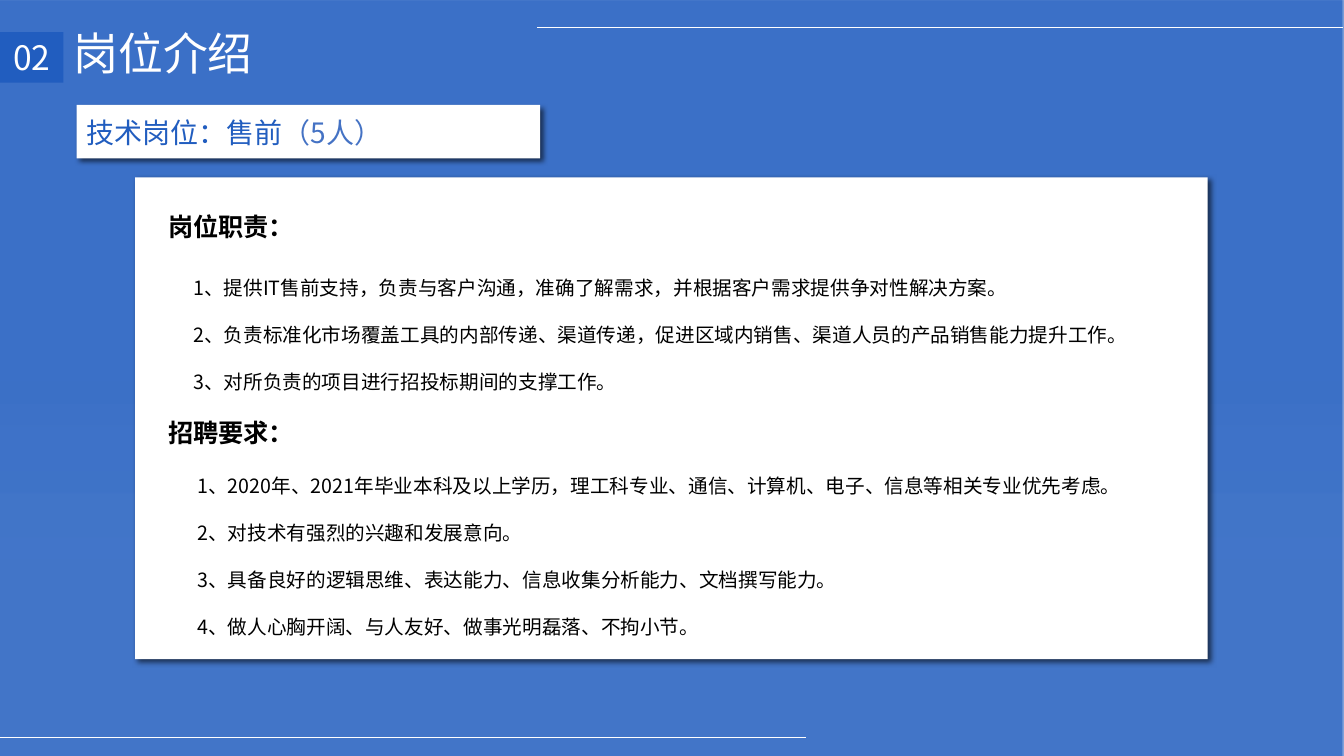
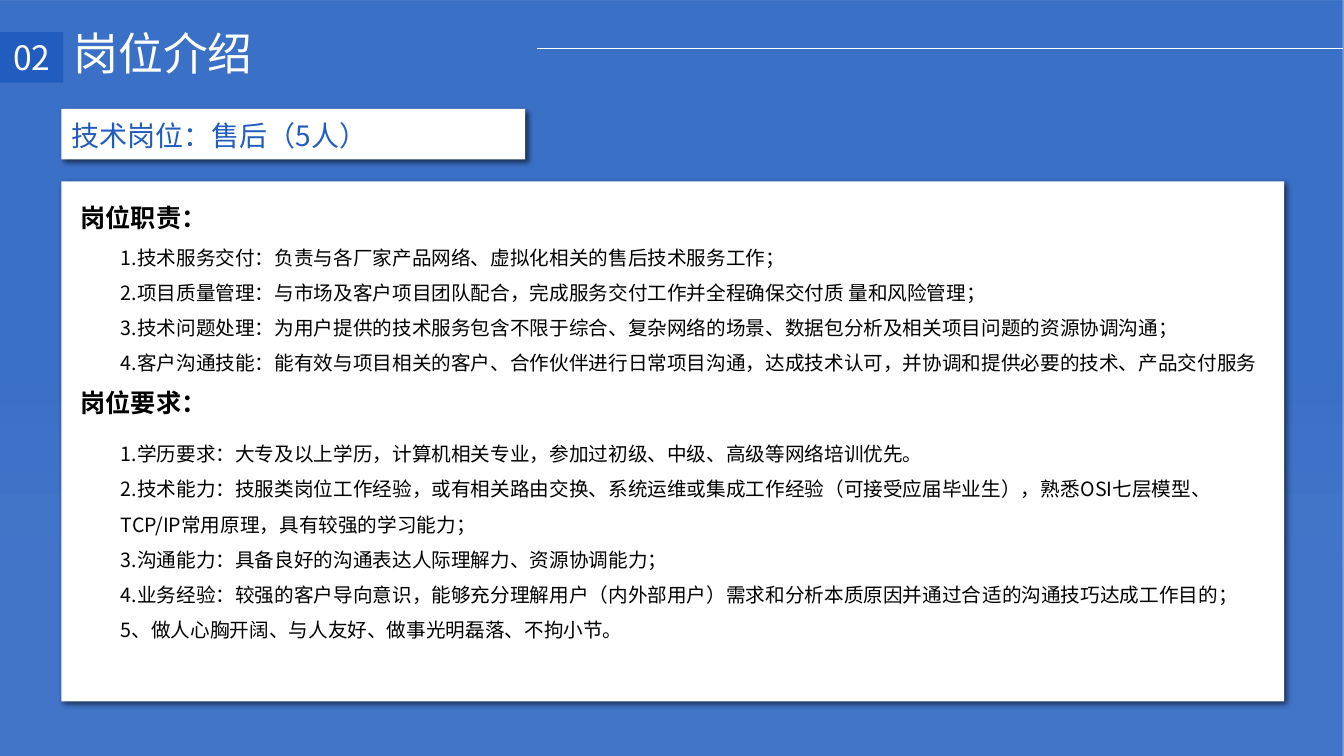
from lxml import etree
from pptx import Presentation
from pptx.dml.color import RGBColor
from pptx.enum import shapes, text
from pptx.oxml.ns import qn
from pptx.util import Pt

FONT = "Noto Sans CJK SC"
COLORS = {"blue": "215DBF", "light_blue": "4472C4", "white": "FFFFFF", "black": "000000"}
WIDTH, HEIGHT = 960, 540
GRADIENT = [(0.45, 88), (0.75, 84)]  # position, opacity in percent
SECTION_NUMBER, SECTION_TITLE = "02", "岗位介绍"

# Boxes are (left, top, width, height); rules are (start x, end x, y).
SLIDES = [
    {
        "job": [("技术岗位：售前", "blue"), ("（5人）", "light_blue")],
        "job_card": (54.7, 74.9, 331.2, 38.2),
        "job_text_top": 79.2,
        "rules": [(383.8, 959, 19.4), (0, 576, 527)],
        "panel": (96.5, 126.7, 766.1, 344.2),
        "line_spacing": 2.0,
        "sections": [
            {
                "heading": "岗位职责：",
                "heading_box": (113, 128.9, 134, 65.5),
                "items_box": (131, 176.4, 697, 108.7),
                "items": [
                    "1、提供IT售前支持，负责与客户沟通，准确了解需求，并根据客户需求提供争对性解决方案。",
                    "2、负责标准化市场覆盖工具的内部传递、渠道传递，促进区域内销售、渠道人员的产品销售能力提升工作。",
                    "3、对所负责的项目进行招投标期间的支撑工作。",
                ],
            },
            {
                "heading": "招聘要求：",
                "heading_box": (113, 273.6, 134, 70.6),
                "items_box": (133.9, 318.2, 690.5, 117.4),
                "items": [
                    "1、2020年、2021年毕业本科及以上学历，理工科专业、通信、计算机、电子、信息等相关专业优先考虑。",
                    "2、对技术有强烈的兴趣和发展意向。",
                    "3、具备良好的逻辑思维、表达能力、信息收集分析能力、文档撰写能力。",
                    "4、做人心胸开阔、与人友好、做事光明磊落、不拘小节。",
                ],
            },
        ],
    },
    {
        "job": [("技术岗位：售后（5人）", "blue")],
        "job_card": (43.9, 77.8, 331.2, 36),
        "job_text_top": 81.4,
        "rules": [(383.8, 959, 34.6)],
        "panel": (43.9, 129.6, 873.4, 371.5),
        "line_spacing": 1.5,
        "sections": [
            {
                "heading": "岗位职责：",
                "heading_box": (50.4, 123.1, 134, 64.1),
                "items_box": (79.2, 163.4, 833.8, 106.6),
                "items": [
                    "1.技术服务交付：负责与各厂家产品网络、虚拟化相关的售后技术服务工作；",
                    "2.项目质量管理：与市场及客户项目团队配合，完成服务交付工作并全程确保交付质 量和风险管理；",
                    "3.技术问题处理：为用户提供的技术服务包含不限于综合、复杂网络的场景、数据包分析及相关项目问题的资源协调沟通；",
                    "4.客户沟通技能：能有效与项目相关的客户、合作伙伴进行日常项目沟通，达成技术认可，并协调和提供必要的技术、产品交付服务",
                ],
            },
            {
                "heading": "岗位要求：",
                "heading_box": (50.4, 256.3, 134, 61.9),
                "items_box": (79.2, 303.8, 812.2, 129.6),
                "items": [
                    "1.学历要求：大专及以上学历，计算机相关专业，参加过初级、中级、高级等网络培训优先。",
                    "2.技术能力：技服类岗位工作经验，或有相关路由交换、系统运维或集成工作经验（可接受应届毕业生），熟悉OSI七层模型、TCP/IP常用原理，具有较强的学习能力；",
                    "3.沟通能力：具备良好的沟通表达人际理解力、资源协调能力；",
                    "4.业务经验：较强的客户导向意识，能够充分理解用户（内外部用户）需求和分析本质原因并通过合适的沟通技巧达成工作目的；",
                    "5、做人心胸开阔、与人友好、做事光明磊落、不拘小节。",
                ],
            },
        ],
    },
]


def rgb(name):
    return RGBColor.from_string(COLORS[name])


def add_rect(s, box, fill=None):
    sp = s.shapes.add_shape(shapes.MSO_SHAPE.RECTANGLE, *map(Pt, box))
    sp.shadow.inherit = False
    sp.line.fill.background()
    if fill:
        sp.fill.solid()
        sp.fill.fore_color.rgb = rgb(fill)
    return sp


def add_card(s, box):
    """Add a white rectangle that casts a soft shadow to the lower right."""
    sp = add_rect(s, box, "white")
    effects = sp._element.spPr.find(qn("a:effectLst"))
    shadow = etree.SubElement(effects, qn("a:outerShdw"), blurRad=str(Pt(4)),
                              dist=str(Pt(3)), dir="2700000", algn="tl", rotWithShape="0")
    color = etree.SubElement(shadow, qn("a:srgbClr"), val=COLORS["black"])
    etree.SubElement(color, qn("a:alpha"), val="58000")


def write(sp, paragraphs, size, bold=False, align=text.PP_ALIGN.LEFT,
          anchor=text.MSO_ANCHOR.TOP, spacing=None):
    """Fill a shape with paragraphs, each a list of (text, colour name) runs."""
    tf = sp.text_frame
    tf.word_wrap = True
    tf.vertical_anchor = anchor
    for i, runs in enumerate(paragraphs):
        p = tf.add_paragraph() if i else tf.paragraphs[0]
        p.alignment = align
        if spacing:
            p.line_spacing = spacing
        for content, color in runs:
            r = p.add_run()
            r.text = content
            r.font.size = Pt(size)
            r.font.bold = bold
            r.font.color.rgb = rgb(color)
            r.font.name = FONT
            etree.SubElement(r.font._element, qn("a:ea"), typeface=FONT)


def add_text(s, box, paragraphs, size, **style):
    write(s.shapes.add_textbox(*map(Pt, box)), paragraphs, size, **style)


def add_rule(s, x1, x2, y):
    line = s.shapes.add_connector(shapes.MSO_CONNECTOR.STRAIGHT, Pt(x1), Pt(y), Pt(x2), Pt(y))
    line.line.color.rgb = rgb("white")
    line.line.width = Pt(0.5)
    etree.SubElement(line._element.spPr, qn("a:effectLst"))


def add_backdrop(s):
    sp = add_rect(s, (-0.7, 0, WIDTH, HEIGHT))
    sp.fill.gradient()
    sp.fill.gradient_angle = 270
    for stop, (position, _) in zip(sp.fill.gradient_stops, GRADIENT):
        stop.position = position
        stop.color.rgb = rgb("blue")
    for color, (_, opacity) in zip(sp._element.spPr.iter(qn("a:srgbClr")), GRADIENT):
        etree.SubElement(color, qn("a:alpha"), val=str(opacity * 1000))


def add_header(s):
    add_text(s, (45.4, 15.1, 170, 46), [[(SECTION_TITLE, "white")]], 32)
    badge = add_rect(s, (0, 23, 45.4, 36), "blue")
    write(badge, [[(SECTION_NUMBER, "white")]], 24,
          align=text.PP_ALIGN.CENTER, anchor=text.MSO_ANCHOR.MIDDLE)


def add_section(s, section, spacing):
    add_text(s, section["heading_box"], [[(section["heading"], "black")]], 18,
             bold=True, anchor=text.MSO_ANCHOR.MIDDLE)
    add_text(s, section["items_box"], [[(item, "black")] for item in section["items"]], 14,
             spacing=spacing)


def add_job_slide(prs, job):
    s = prs.slides.add_slide(prs.slide_layouts[6])
    add_backdrop(s)
    add_header(s)
    add_card(s, job["job_card"])
    add_text(s, (job["job_card"][0], job["job_text_top"], 296, 31.7), [job["job"]], 20)
    for rule in job["rules"]:
        add_rule(s, *rule)
    add_card(s, job["panel"])
    for section in job["sections"]:
        add_section(s, section, job["line_spacing"])


def main():
    prs = Presentation()
    prs.slide_width, prs.slide_height = Pt(WIDTH), Pt(HEIGHT)
    for job in SLIDES:
        add_job_slide(prs, job)
    prs.save("out.pptx")


if __name__ == "__main__":
    main()
